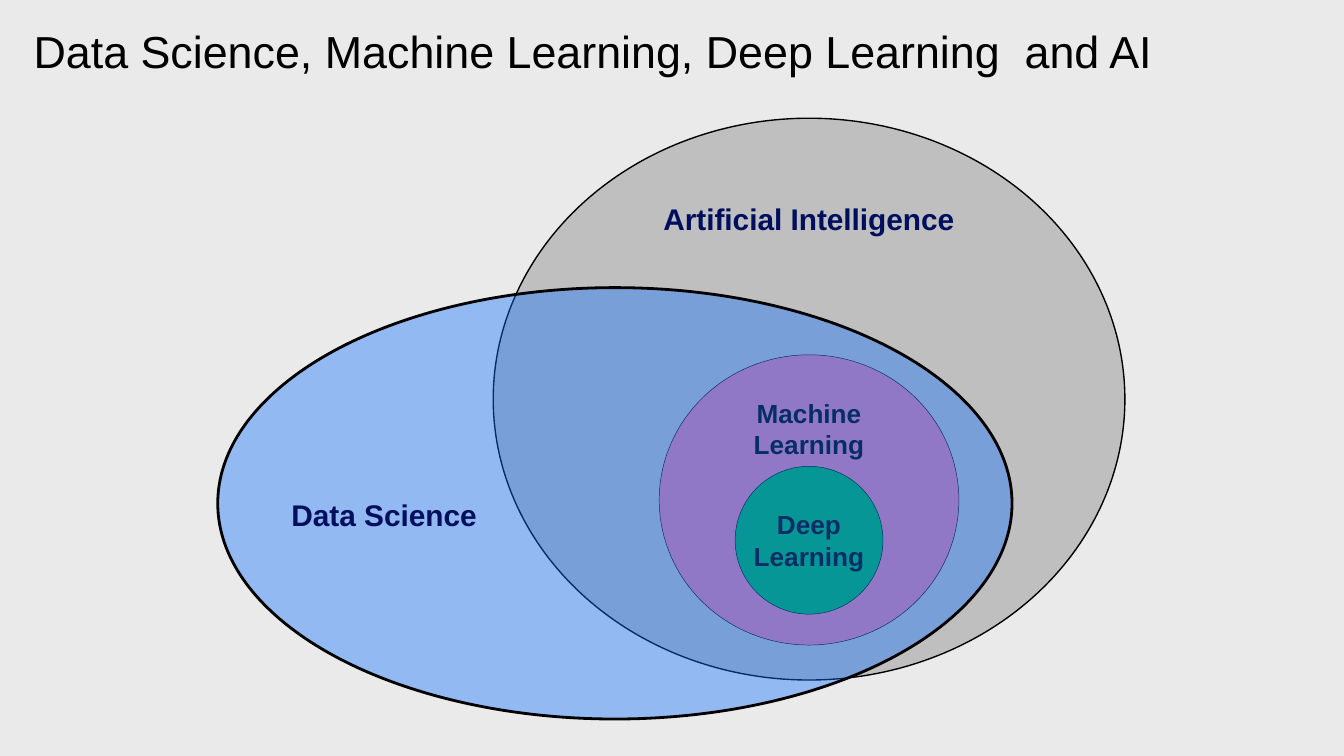
import pptx
import pptx.util
import pptx.dml.color
import pptx.enum.shapes
import pptx.enum.text
import lxml.etree

Inches = pptx.util.Inches
Pt = pptx.util.Pt
Anchor = pptx.enum.text.MSO_ANCHOR
Align = pptx.enum.text.PP_ALIGN

FONT = "Arial"
COLOURS = {
    "page": "EAEAEA",
    "ai": "BFBFBF",
    "machine": "E97DA1",
    "deep": "00B050",
    "data": "0F71FF",
    "ink": "000000",
    "navy": "000E5E",
}


def colour(name):
    """Return the named colour of the palette."""
    return pptx.dml.color.RGBColor.from_string(COLOURS[name])


def set_frame(frame, wrap=True, anchor=Anchor.TOP):
    """Remove the insets of a text frame and set its wrapping and anchor."""
    frame.margin_left = frame.margin_right = 0
    frame.margin_top = frame.margin_bottom = 0
    frame.word_wrap = wrap
    frame.vertical_anchor = anchor


def add_span(para, text, size, ink, bold):
    """Append one formatted run to a paragraph."""
    span = para.add_run()
    span.text = text
    span.font.name = FONT
    span.font.size = Pt(size)
    span.font.bold = bold
    span.font.color.rgb = colour(ink)


def add_ellipse(page, left, top, width, height, fill, line_width=None):
    """Draw an ellipse, with a hairline unless a line width is given."""
    ellipse = page.shapes.add_shape(
        pptx.enum.shapes.MSO_SHAPE.OVAL,
        Inches(left), Inches(top), Inches(width), Inches(height))
    ellipse.shadow.inherit = False
    ellipse.fill.solid()
    ellipse.fill.fore_color.rgb = colour(fill)
    ellipse.line.color.rgb = colour("ink")
    ellipse.line.width = Pt(line_width or 0)
    return ellipse


def set_opacity(shape, percent):
    """Make the solid fill of a shape partly transparent."""
    tag = pptx.oxml.ns.qn("a:srgbClr")
    fill = shape.fill._xPr.find(pptx.oxml.ns.qn("a:solidFill")).find(tag)
    alpha = lxml.etree.SubElement(fill, pptx.oxml.ns.qn("a:alpha"))
    alpha.set("val", str(percent * 1000))


def add_title(page, left, top, width, height):
    """Place and format the slide title."""
    title = page.shapes.title
    title.left, title.top = Inches(left), Inches(top)
    title.width, title.height = Inches(width), Inches(height)
    set_frame(title.text_frame)
    para = title.text_frame.paragraphs[0]
    para.alignment = Align.LEFT
    para.line_spacing = 0.9
    add_span(para, "Data Science, Machine Learning, Deep Learning  and AI",
             24, "ink", False)


def add_nested_fields(page, axis, top):
    """Draw AI, machine learning and deep learning centred on one axis."""
    fields = [
        (["Artificial Intelligence"], 0, 4.7, 4.18, "ai", None, 16, "navy"),
        (["Machine Learning"], 1.76, 2.23, 2.16, "machine", 0.25, 14, "ink"),
        (["Deep", "Learning"], 2.59, 1.1, 1.1, "deep", 0.25, 14, "ink"),
    ]
    for lines, drop, width, height, fill, line_width, size, ink in fields:
        ellipse = add_ellipse(page, axis - width / 2, top + drop,
                              width, height, fill, line_width)
        broken = len(lines) > 1
        set_frame(ellipse.text_frame, wrap=not broken,
                  anchor=Anchor.MIDDLE if broken else Anchor.TOP)
        para = ellipse.text_frame.paragraphs[0]
        para.alignment = Align.CENTER
        for index, text in enumerate(lines):
            if index:
                para.add_line_break()
            add_span(para, text, size, ink, True)


def add_data_science(page, left, top, width, height):
    """Draw the translucent data science ellipse and its label."""
    ellipse = add_ellipse(page, left, top, width, height, "data", 1.5)
    set_opacity(ellipse, 40)
    box = page.shapes.add_textbox(Inches(left + 0.45), Inches(top + 1.51),
                                  Inches(1.6), Inches(0.37))
    box.text_frame.word_wrap = False
    box.text_frame.auto_size = pptx.enum.text.MSO_AUTO_SIZE.SHAPE_TO_FIT_TEXT
    add_span(box.text_frame.paragraphs[0], "Data Science", 16, "navy", True)


def main():
    """Build and save the deck."""
    deck = pptx.Presentation()
    deck.slide_width = Inches(10)
    deck.slide_height = deck.slide_width * 9 // 16
    page = deck.slides.add_slide(deck.slide_layouts[5])
    page.background.fill.solid()
    page.background.fill.fore_color.rgb = colour("page")
    add_title(page, 0.25, 0.22, 9, 0.42)
    add_nested_fields(page, axis=6.02, top=0.88)
    add_data_science(page, 1.62, 2.14, 5.91, 3.21)
    deck.save("out.pptx")


if __name__ == "__main__":
    main()
